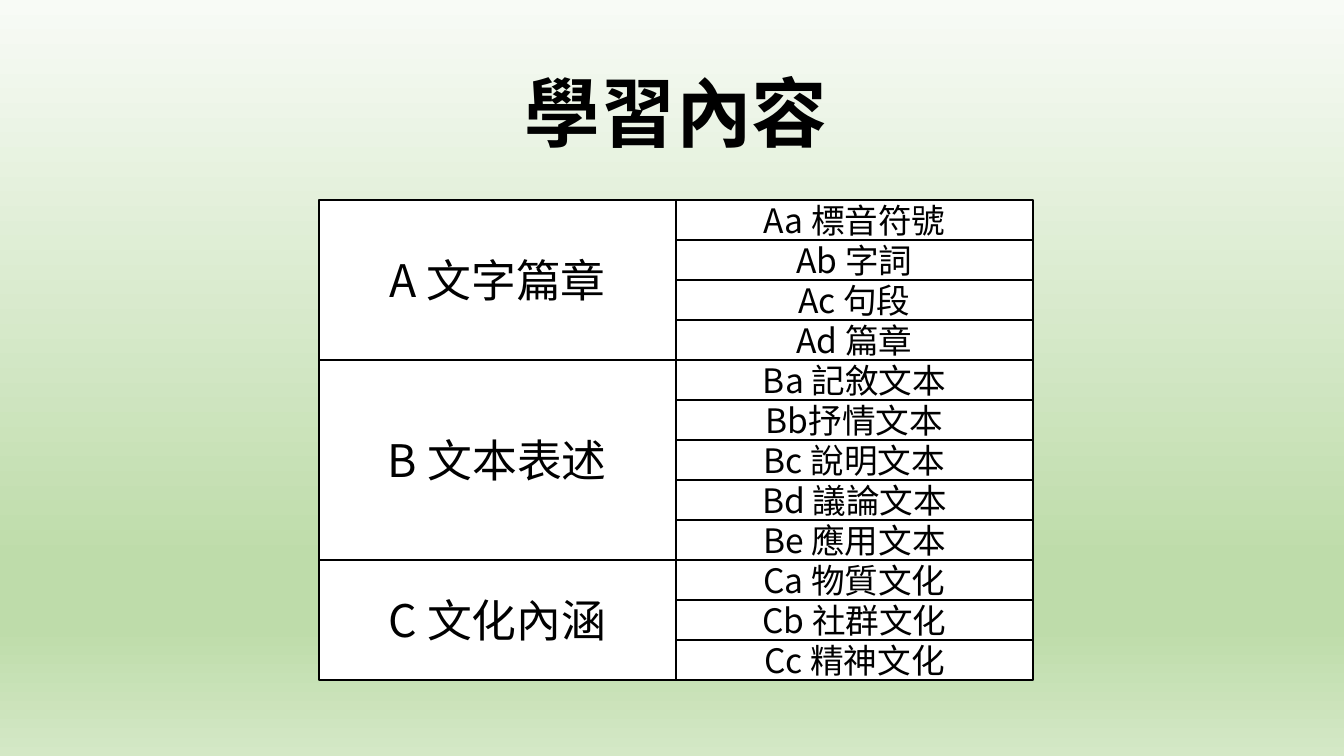
from copy import deepcopy
from dataclasses import dataclass

from lxml import etree
from pptx import Presentation
from pptx.dml.color import RGBColor
from pptx.enum import shapes, text
from pptx.oxml import ns
from pptx.util import Pt

PX = 914400 / 100.8  # EMU in one px
WIDE, HIGH = 1344, 756


@dataclass(frozen=True)
class Theme:
    face: str = "Noto Sans CJK SC"
    ink: str = "000000"
    paper: str = "FFFFFF"
    fade: tuple = ((0, "F8FBF6"), (74, "BEDCAA"), (83, "BEDCAA"), (100, "D4E8C6"))
    title: int = 54
    group: int = 32
    item: int = 24
    rule: int = 1


THEME = Theme()
LEFT, TOP, COL, ROW = 319, 200, 357, 40
TOPICS = {
    "A 文字篇章": ["Aa 標音符號", "Ab 字詞", "Ac 句段", "Ad 篇章"],
    "B 文本表述": ["Ba 記敘文本", "Bb抒情文本", "Bc 說明文本", "Bd 議論文本", "Be 應用文本"],
    "C 文化內涵": ["Ca 物質文化", "Cb 社群文化", "Cc 精神文化"],
}


def emu(*sizes):
    return [round(size * PX) for size in sizes]


def rgb(code):
    return RGBColor.from_string(code)


def write(frame, words, size, bold=False):
    """Put one centred line in a frame, with the face set for CJK text too."""
    frame.text = words
    frame.vertical_anchor = text.MSO_ANCHOR.MIDDLE
    line = frame.paragraphs[0]
    line.alignment = text.PP_ALIGN.CENTER
    font = line.runs[0].font
    font.name, font.size, font.bold = THEME.face, Pt(size), bold
    font.color.rgb = rgb(THEME.ink)
    props = line.runs[0]._r.get_or_add_rPr()
    etree.SubElement(props, ns.qn("a:ea"), typeface=THEME.face)


def rect(slide, *box):
    shape = slide.shapes.add_shape(shapes.MSO_SHAPE.RECTANGLE, *emu(*box))
    shape.shadow.inherit = False
    return shape


def backdrop(slide):
    """Cover the slide with a gradient that runs from top to bottom."""
    shape = rect(slide, 0, 0, WIDE, HIGH)
    shape.line.fill.background()
    fill = shape.fill
    fill.gradient()
    fill.gradient_angle = 270
    stops = shape._element.spPr.find(".//" + ns.qn("a:gsLst"))
    while len(stops) < len(THEME.fade):
        stops.append(deepcopy(stops[0]))
    for stop, (spot, code) in zip(fill.gradient_stops, THEME.fade):
        stop.position = spot / 100
        stop.color.rgb = rgb(code)


def cell(slide, words, size, *box):
    shape = rect(slide, *box)
    shape.fill.solid()
    shape.fill.fore_color.rgb = rgb(THEME.paper)
    shape.line.color.rgb = rgb(THEME.ink)
    shape.line.width = Pt(THEME.rule)
    frame = shape.text_frame
    frame.margin_top = frame.margin_bottom = 0
    write(frame, words, size)


def grid(slide):
    """Draw each group beside its items; a group is as tall as its items."""
    top = TOP
    for group, items in TOPICS.items():
        cell(slide, group, THEME.group, LEFT, top, COL, ROW * len(items))
        for item in items:
            cell(slide, item, THEME.item, LEFT + COL, top, COL, ROW)
            top += ROW


def title(slide, words):
    box = slide.shapes.add_textbox(*emu(513, 61, 326, 101))
    frame = box.text_frame
    frame.word_wrap = False
    frame.auto_size = text.MSO_AUTO_SIZE.SHAPE_TO_FIT_TEXT
    write(frame, words, THEME.title, bold=True)


def main():
    deck = Presentation()
    deck.slide_width, deck.slide_height = emu(WIDE, HIGH)
    slide = deck.slides.add_slide(deck.slide_layouts[6])
    backdrop(slide)
    grid(slide)
    title(slide, "學習內容")
    deck.save("out.pptx")


if __name__ == "__main__":
    main()
